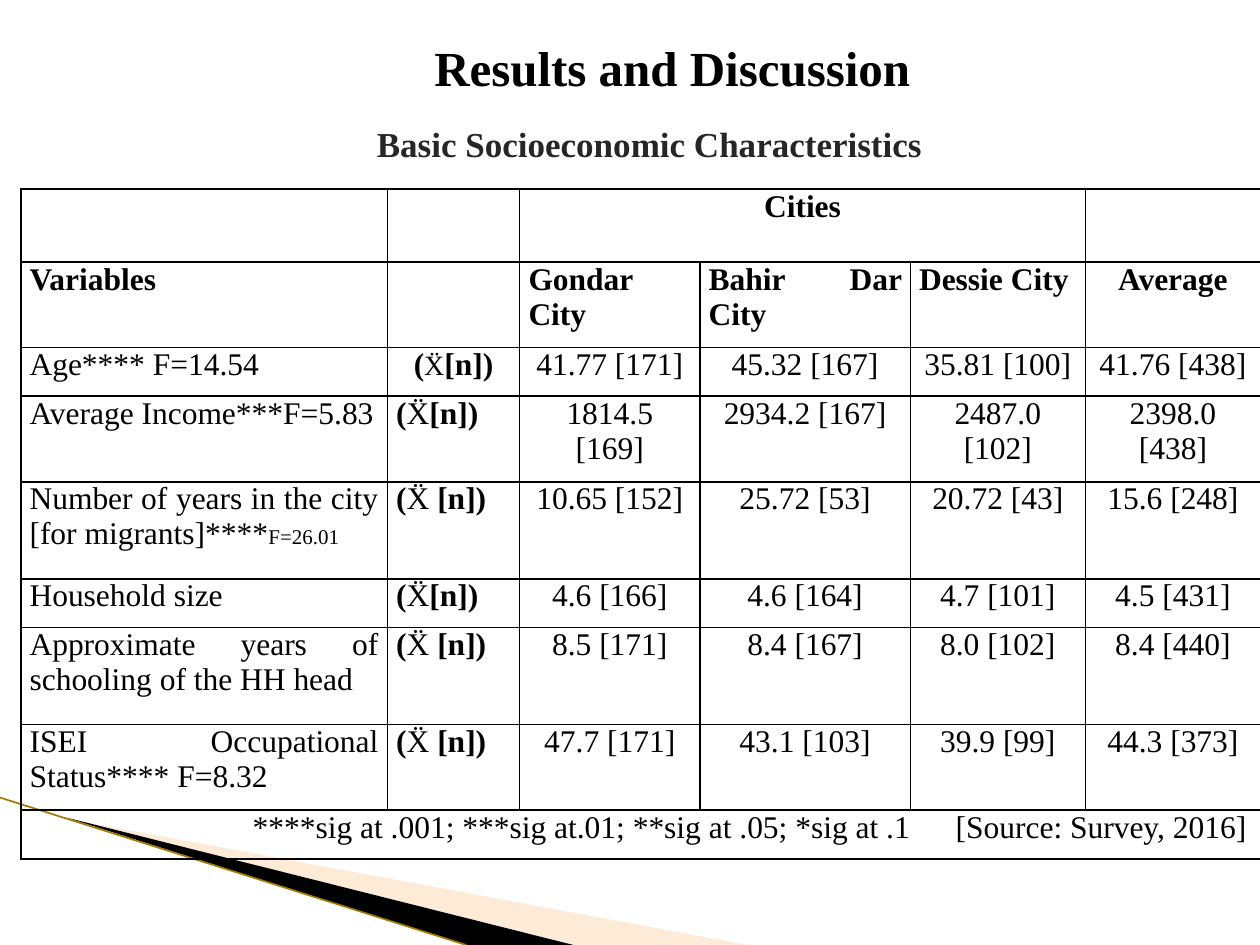
from dataclasses import dataclass

from lxml import etree
from pptx import Presentation
from pptx import util as u
from pptx.dml.color import RGBColor
from pptx.enum import shapes, text
from pptx.oxml.ns import qn

FONT = "Times New Roman"
BLACK = "000000"
LEFT, CENTER, JUSTIFY = text.PP_ALIGN.LEFT, text.PP_ALIGN.CENTER, text.PP_ALIGN.JUSTIFY

deck = Presentation()
deck.slide_width, deck.slide_height = u.Inches(10), u.Inches(7.5)


def across(percent: float) -> int:
    return round(deck.slide_width * percent / 100)


def down(percent: float) -> int:
    return round(deck.slide_height * percent / 100)


def colour(hex_code: str) -> RGBColor:
    return RGBColor.from_string(hex_code)


@dataclass
class Piece:
    words: str
    bold: bool = False
    size: float = 18


@dataclass
class Heading:
    words: str
    left: float
    top: float
    width: float
    height: float
    size: float
    hex_code: str


@dataclass
class Wedge:
    """A corner sliver, with points in percent of the slide."""
    points: list[tuple[float, float]]
    hex_code: str
    opacity: int = 100


@dataclass
class Variable:
    label: list[Piece]
    values: list[str]
    gap: str = ""
    symbol_size: float = 18
    symbol_align: int = JUSTIFY

    def symbol(self) -> list[Piece]:
        return [Piece("(", True), Piece("Ẍ" + self.gap, size=self.symbol_size), Piece("[n])", True)]


HEADINGS = [
    Heading("Results and Discussion", 24.6, 3.33, 57.5, 7.6, 28, BLACK),
    Heading("Basic Socioeconomic Characteristics", 13.2, 12.27, 76.7, 5.87, 20, "262626"),
]
WEDGES = [
    Wedge([(5.5, 86.7), (59.3, 100), (45.6, 100)], "FCCF9B", 40),
    Wedge([(5.3, 86.53), (45.5, 100), (37, 100)], BLACK),
]
COLUMNS = [29.1, 10.5, 14.3, 16.7, 13.9, 13.9]
ROWS = [7.73, 9.07, 5.13, 9.07, 10.27, 5.13, 10.27, 9.07, 5.2]
HEADERS = ["Variables", "", "Gondar City", "Bahir Dar City", "Dessie City", "Average"]
VARIABLES = [
    Variable([Piece("Age**** F=14.54")],
             ["41.77 [171]", "45.32 [167]", "35.81 [100]", "41.76 [438]"],
             symbol_size=16, symbol_align=CENTER),
    Variable([Piece("Average Income***F=5.83")],
             ["1814.5 [169]", "2934.2 [167]", "2487.0 [102]", "2398.0 [438]"]),
    Variable([Piece("Number of years in the city [for migrants]****"), Piece("F=26.01", size=12)],
             ["10.65 [152]", "25.72 [53]", "20.72 [43]", "15.6 [248]"], " "),
    Variable([Piece("Household size")],
             ["4.6 [166]", "4.6 [164]", "4.7 [101]", "4.5 [431]"]),
    Variable([Piece("Approximate years of schooling of the HH head")],
             ["8.5 [171]", "8.4 [167]", "8.0 [102]", "8.4 [440]"], " "),
    Variable([Piece("ISEI Occupational Status**** F=8.32")],
             ["47.7 [171]", "43.1 [103]", "39.9 [99]", "44.3 [373]"], " "),
]
FOOTNOTE = "\t****sig at .001; ***sig at.01; **sig at .05; *sig at .1\t[Source: Survey, 2016]"
FOOTNOTE_STOPS = [17.7, 73.5]


def style(font, size: float, hex_code: str, bold: bool) -> None:
    font.name, font.size, font.bold = FONT, u.Pt(size), bold
    font.color.rgb = colour(hex_code)


def fill_heading(placeholder, heading: Heading) -> None:
    placeholder.left, placeholder.top = across(heading.left), down(heading.top)
    placeholder.width, placeholder.height = across(heading.width), down(heading.height)
    frame = placeholder.text_frame
    frame.text = heading.words
    frame.word_wrap = True
    frame.auto_size = text.MSO_AUTO_SIZE.NONE
    frame.vertical_anchor = text.MSO_ANCHOR.TOP
    line = frame.paragraphs[0]
    line.alignment, line.space_before = CENTER, u.Pt(0)
    properties = line._p.get_or_add_pPr()
    properties.set("marL", "0")
    properties.set("indent", "0")
    etree.SubElement(properties, qn("a:buNone"))
    style(line.runs[0].font, heading.size, heading.hex_code, True)


def draw_wedge(slide, wedge: Wedge) -> None:
    corners = [(across(x), down(y)) for x, y in wedge.points]
    builder = slide.shapes.build_freeform(*corners[0])
    builder.add_line_segments(corners[1:], close=True)
    sliver = builder.convert_to_shape()
    sliver.shadow.inherit = False
    sliver.line.fill.background()
    sliver.fill.solid()
    sliver.fill.fore_color.rgb = colour(wedge.hex_code)
    if wedge.opacity < 100:
        tint = sliver._element.spPr.find(".//" + qn("a:srgbClr"))
        etree.SubElement(tint, qn("a:alpha"), val=str(wedge.opacity * 1000))


def draw_edge(slide) -> None:
    edge = slide.shapes.add_connector(
        shapes.MSO_CONNECTOR.STRAIGHT, 0, down(84.4), across(37), down(100))
    edge.line.color.rgb = colour("A37A00")
    edge.line.width = u.Pt(0.95)
    etree.SubElement(edge._element.spPr, qn("a:effectLst"))


def frame_cell(cell) -> None:
    """Clear the fill and rule all four sides."""
    cell.margin_left = cell.margin_right = u.Inches(0.07)
    cell.margin_top = cell.margin_bottom = 0
    properties = cell._tc.get_or_add_tcPr()
    for side in ("lnL", "lnR", "lnT", "lnB"):
        rule = etree.SubElement(properties, qn("a:" + side), w=str(u.Pt(1)))
        paint = etree.SubElement(rule, qn("a:solidFill"))
        etree.SubElement(paint, qn("a:srgbClr"), val=BLACK)
    cell.fill.background()


def write_cell(cell, pieces: list[Piece], align: int) -> None:
    line = cell.text_frame.paragraphs[0]
    line.alignment = align
    for piece in pieces:
        run = line.add_run()
        run.text = piece.words
        style(run.font, piece.size, BLACK, piece.bold)


def draw_table(slide) -> None:
    table = slide.shapes.add_table(
        len(ROWS), len(COLUMNS), across(1.65), down(20),
        across(sum(COLUMNS)), down(sum(ROWS))).table
    table.first_row = table.horz_banding = False
    for column, share in zip(table.columns, COLUMNS):
        column.width = across(share)
    for row, share in zip(table.rows, ROWS):
        row.height = down(share)
    for cell in table.iter_cells():
        frame_cell(cell)

    last_row, last_column = len(ROWS) - 1, len(COLUMNS) - 1
    table.cell(0, 2).merge(table.cell(0, 4))
    write_cell(table.cell(0, 2), [Piece("Cities", True)], CENTER)
    for index, header in enumerate(HEADERS):
        if header:
            align = CENTER if index == last_column else JUSTIFY
            write_cell(table.cell(1, index), [Piece(header, True)], align)
    for index, variable in enumerate(VARIABLES, start=2):
        write_cell(table.cell(index, 0), variable.label, JUSTIFY)
        write_cell(table.cell(index, 1), variable.symbol(), variable.symbol_align)
        for column, value in enumerate(variable.values, start=2):
            write_cell(table.cell(index, column), [Piece(value)], CENTER)

    footer = table.cell(last_row, 0)
    footer.merge(table.cell(last_row, last_column))
    properties = footer.text_frame.paragraphs[0]._p.get_or_add_pPr()
    stops = etree.SubElement(properties, qn("a:tabLst"))
    for stop in FOOTNOTE_STOPS:
        etree.SubElement(stops, qn("a:tab"), pos=str(across(stop)), algn="l")
    write_cell(footer, [Piece(FOOTNOTE)], LEFT)


def main() -> None:
    slide = deck.slides.add_slide(deck.slide_layouts[1])
    for placeholder, heading in zip(slide.placeholders, HEADINGS):
        fill_heading(placeholder, heading)
    for wedge in WEDGES:
        draw_wedge(slide, wedge)
    draw_edge(slide)
    draw_table(slide)
    deck.save("out.pptx")


if __name__ == "__main__":
    main()
